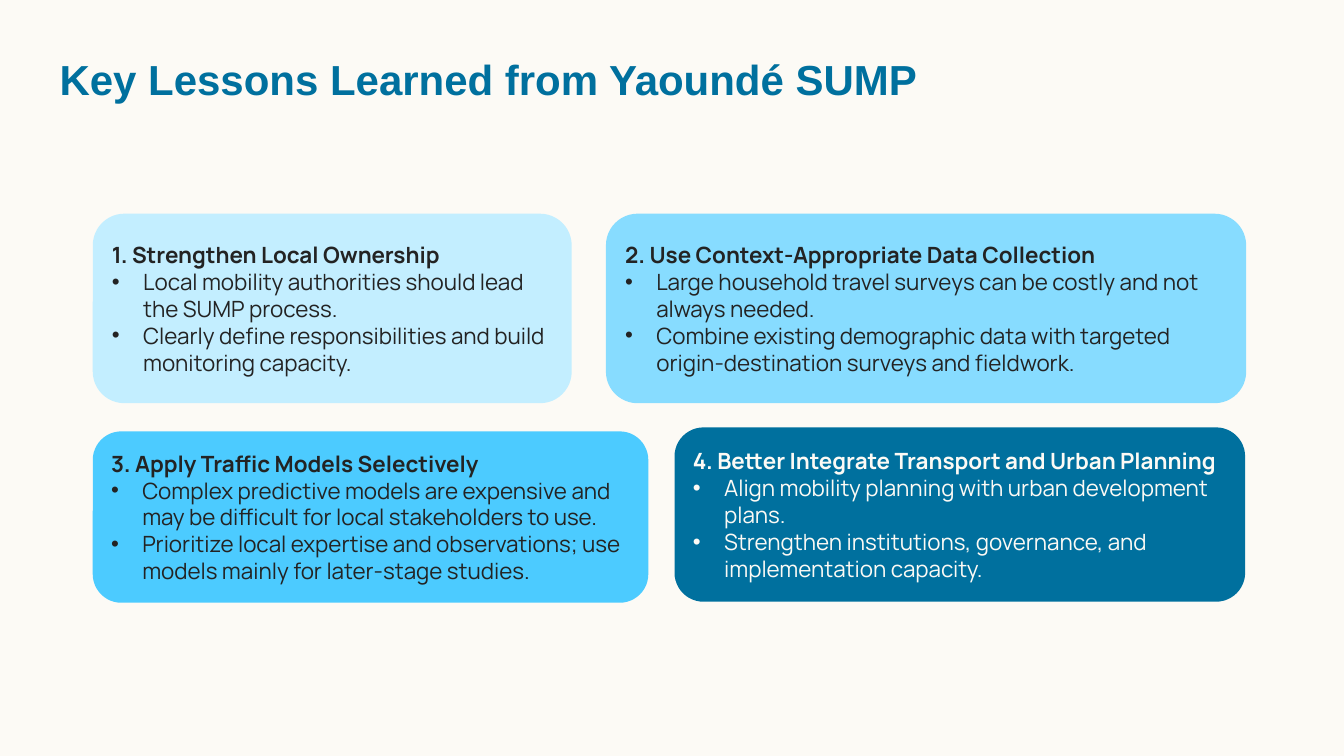
"""Build the slide of key lessons learned from the Yaoundé SUMP."""
from dataclasses import dataclass

from lxml import etree
from pptx import Presentation
from pptx.dml.color import RGBColor
from pptx.enum.shapes import MSO_SHAPE
from pptx.enum.text import MSO_ANCHOR, PP_ALIGN
from pptx.oxml.ns import qn
from pptx.util import Inches, Pt

ROUNDED = MSO_SHAPE.ROUNDED_RECTANGLE
MIDDLE = MSO_ANCHOR.MIDDLE
LEFT = PP_ALIGN.LEFT

COLORS = {
    "cream": "FCFAF5",
    "ink": "232323",
    "pale": "C3EEFF",
    "light": "87DCFF",
    "bright": "4CCBFF",
    "deep": "00709E",
}
BULLET_INDENT = Inches(0.31)
TITLE_FORMAT = {"name": "Arial", "size": Pt(30), "bold": True}
HEADING_FORMAT = {"name": "Manrope", "size": Pt(16), "bold": True}
BULLET_FORMAT = {**HEADING_FORMAT, "bold": False}


@dataclass(frozen=True)
class Lesson:
    """A numbered lesson card with its place in inches."""

    left: float
    top: float
    width: float
    height: float
    fill: str
    ink: str
    heading: str
    points: tuple[str, ...]


LESSONS = (
    Lesson(0.92, 2.12, 4.75, 1.88, "pale", "ink", "1. Strengthen Local Ownership", (
        "Local mobility authorities should lead the SUMP process.",
        "Clearly define responsibilities and build monitoring capacity.",
    )),
    Lesson(6.01, 2.12, 6.35, 1.88, "light", "ink", "2. Use Context-Appropriate Data Collection", (
        "Large household travel surveys can be costly and not always needed.",
        "Combine existing demographic data with targeted origin-destination surveys and fieldwork.",
    )),
    Lesson(0.92, 4.28, 5.51, 1.7, "bright", "ink", "3. Apply Traffic Models Selectively", (
        "Complex predictive models are expensive and may be difficult for local stakeholders to use.",
        "Prioritize local expertise and observations; use models mainly for later-stage studies.",
    )),
    Lesson(6.69, 4.24, 5.66, 1.73, "deep", "cream", "4. Better Integrate Transport and Urban Planning", (
        "Align mobility planning with urban development plans.",
        "Strengthen institutions, governance, and implementation capacity.",
    )),
)


def color(name: str) -> RGBColor:
    """Return the named palette colour."""
    return RGBColor.from_string(COLORS[name])


def write(para, text: str, formats: dict, ink: str) -> None:
    """Put one formatted span of text in a left-aligned paragraph."""
    para.alignment = LEFT
    span = para.add_run()
    span.text = text
    for attribute, value in formats.items():
        setattr(span.font, attribute, value)
    span.font.color.rgb = color(ink)


def add_bullet(para) -> None:
    """Give a paragraph a hanging round bullet."""
    properties = para._p.get_or_add_pPr()
    properties.set("marL", str(BULLET_INDENT))
    properties.set("indent", str(-BULLET_INDENT))
    etree.SubElement(properties, qn("a:buFont"), typeface="Arial")
    etree.SubElement(properties, qn("a:buChar"), char="•")


def add_title(page, text: str) -> None:
    """Place and format the page title."""
    title = page.shapes.title
    place = {"left": 0.59, "top": 0.46, "width": 8.8, "height": 0.65}
    for attribute, value in place.items():
        setattr(title, attribute, Inches(value))
    frame = title.text_frame
    for side in ("left", "top", "right", "bottom"):
        setattr(frame, f"margin_{side}", 0)
    frame.vertical_anchor = MIDDLE
    write(frame.paragraphs[0], text, TITLE_FORMAT, "deep")


def add_lesson(page, lesson: Lesson) -> None:
    """Draw a lesson card with its heading and bullets."""
    place = (lesson.left, lesson.top, lesson.width, lesson.height)
    box = page.shapes.add_shape(ROUNDED, *map(Inches, place))
    box.shadow.inherit = False
    box.fill.solid()
    box.fill.fore_color.rgb = color(lesson.fill)
    box.line.fill.background()
    frame = box.text_frame
    frame.word_wrap = True
    frame.vertical_anchor = MIDDLE
    write(frame.paragraphs[0], lesson.heading, HEADING_FORMAT, lesson.ink)
    for point in lesson.points:
        para = frame.add_paragraph()
        add_bullet(para)
        write(para, point, BULLET_FORMAT, lesson.ink)


def main() -> None:
    """Build and save the deck."""
    deck = Presentation()
    deck.slide_width, deck.slide_height = Inches(13.33), Inches(7.5)
    page = deck.slides.add_slide(deck.slide_layouts.get_by_name("Title Only"))
    page.background.fill.solid()
    page.background.fill.fore_color.rgb = color("cream")
    add_title(page, "Key Lessons Learned from Yaoundé SUMP")
    for lesson in LESSONS:
        add_lesson(page, lesson)
    deck.save("out.pptx")


if __name__ == "__main__":
    main()
